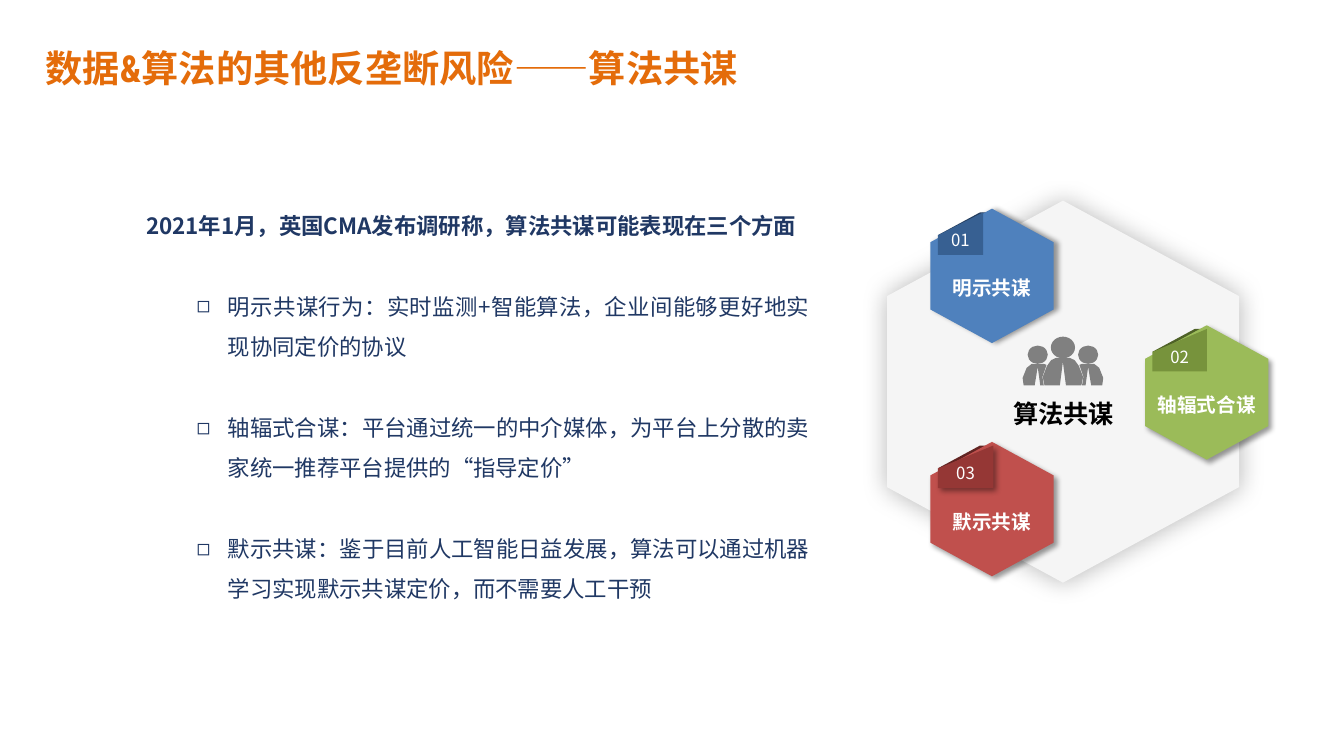
"""Build a slide on algorithmic collusion: three listed forms beside a hexagon diagram."""
from dataclasses import dataclass

from lxml import etree
from pptx import Presentation
from pptx import util as u
from pptx.enum import shapes, text
from pptx.dml.color import RGBColor
from pptx.oxml.ns import qn


@dataclass(frozen=True)
class Theme:
    orange: str = "E46C0A"
    navy: str = "203864"
    white: str = "FFFFFF"
    black: str = "000000"
    pale: str = "F5F5F5"
    grey: str = "808080"
    cjk: str = "Noto Sans CJK SC"
    latin_title: str = "Roboto Condensed"
    title: float = 26.6
    centre: int = 18
    body: int = 16
    label: int = 14
    number: int = 12


theme = Theme()
deck = Presentation()
deck.slide_width, deck.slide_height = u.Inches(13.33), u.Inches(7.5)
COL, ROW = deck.slide_width / 80, deck.slide_height / 45
slide = deck.slides.add_slide(deck.slide_layouts[1])


def write(paragraph, words, size, color, bold=False, latin=theme.cjk):
    run = paragraph.add_run()
    run.text = words
    run.font.size, run.font.bold = u.Pt(size), bold
    run.font.color.rgb = RGBColor.from_string(color)
    run.font.name = latin
    etree.SubElement(run.font._element, qn("a:ea"), typeface=theme.cjk)


def outline(left, top, points, color, shadow=None):
    (x, y), *rest = [(round((left + px) * COL), round((top + py) * ROW)) for px, py in points]
    builder = slide.shapes.build_freeform(x, y)
    builder.add_line_segments(rest, close=True)
    form = builder.convert_to_shape()
    form.fill.solid()
    form.fill.fore_color.rgb = RGBColor.from_string(color)
    form.line.fill.background()
    form.shadow.inherit = False
    if shadow:
        alpha, blur, distance, angle = shadow
        effects = form._element.spPr.find(qn("a:effectLst"))
        outer = etree.SubElement(effects, qn("a:outerShdw"), blurRad=str(u.Pt(blur)),
                                 dist=str(u.Pt(distance)), dir=str(angle * 60000),
                                 algn="ctr", rotWithShape="0")
        shade = etree.SubElement(outer, qn("a:srgbClr"), val=theme.black)
        etree.SubElement(shade, qn("a:alpha"), val=str(alpha * 1000))
    return form


heading = slide.shapes.title
forms = slide.placeholders[1]
for holder, (left, top, width, height) in (
    (heading, (2.7, 2.7, 52.3, 2.7)),
    (forms, (8.1, 11.52, 40.7, 24.54)),
):
    holder.left, holder.top = round(left * COL), round(top * ROW)
    holder.width, holder.height = round(width * COL), round(height * ROW)
    holder.text_frame.word_wrap = True
    holder.text_frame.auto_size = text.MSO_AUTO_SIZE.NONE
    holder.text_frame.vertical_anchor = text.MSO_ANCHOR.TOP

frame = heading.text_frame
frame.margin_left = frame.margin_top = frame.margin_right = frame.margin_bottom = 0
frame.paragraphs[0].alignment = text.PP_ALIGN.LEFT
write(frame.paragraphs[0], "数据&算法的其他反垄断风险——算法共谋", theme.title, theme.orange,
      True, theme.latin_title)

statements = (
    "2021年1月，英国CMA发布调研称，算法共谋可能表现在三个方面",
    "明示共谋行为：实时监测+智能算法，企业间能够更好地实现协同定价的协议",
    "轴辐式合谋：平台通过统一的中介媒体，为平台上分散的卖家统一推荐平台提供的“指导定价”",
    "默示共谋：鉴于目前人工智能日益发展，算法可以通过机器学习实现默示共谋定价，而不需要人工干预",
)
for order, statement in enumerate(statements):
    listed = order > 0
    paragraph = forms.text_frame.add_paragraph() if listed else forms.text_frame.paragraphs[0]
    paragraph.alignment = text.PP_ALIGN.JUSTIFY
    paragraph.line_spacing = 1.5
    paragraph.space_before = u.Pt(29 if listed else 0)
    paragraph.level = int(listed)
    properties = paragraph._p.get_or_add_pPr()
    properties.set("marL", str(u.Inches(0.81 if listed else 0)))
    properties.set("indent", str(u.Inches(-0.31 if listed else 0)))
    if listed:
        etree.SubElement(properties, qn("a:buChar"), char="◻")
    else:
        etree.SubElement(properties, qn("a:buNone"))
    write(paragraph, statement, theme.body, theme.navy, not listed)

hexagon = ((0.5, 0), (1, 0.25), (1, 0.75), (0.5, 1), (0, 0.75), (0, 0.25))
outline(52.8, 11.94, [(x * 20.95, y * 22.74) for x, y in hexagon], theme.pale, (28, 18, 0, 0))

badges = (
    ("01", "明示共谋", 55.38, 2.7, "4F81BD", "254061", "376092", 0, None),
    ("02", "轴辐式合谋", 68.16, 3.24, "9BBB59", "4F6228", "77933C", 45, None),
    ("03", "默示共谋", 55.38, 3.3, "C0504D", "632523", "953735", 45, (40, 4, 3, 45)),
)
for order, (number, name, left, tab_width, color, dark, medium, angle, tab_shadow) in enumerate(badges):
    top = 12.42 + order * 6.94
    tab_left, tab_top = left + 0.44, top + 0.22
    outline(tab_left, tab_top, ((0, 1.36), (2.52, 0), (3.24, 0), (3.24, 1.36)), dark)
    badge = outline(left, top, [(x * 7.34, y * 8) for x, y in hexagon], color, (40, 4, 3, angle))
    tab = outline(tab_left, tab_top,
                  ((0, 2.53), (tab_width, 2.53), (tab_width, 0), (0, 1.37)), medium, tab_shadow)
    badge.text_frame.margin_bottom = u.Inches(0.43)
    for part, words, size, bold in ((badge, name, theme.label, True),
                                    (tab, number, theme.number, False)):
        part.text_frame.word_wrap = True
        part.text_frame.vertical_anchor = text.MSO_ANCHOR.BOTTOM
        part.text_frame.paragraphs[0].alignment = text.PP_ALIGN.CENTER
        write(part.text_frame.paragraphs[0], words, size, theme.white, bold)

middle, crown = 63.27, 20.04
half_coat = [(0, 1.5), (-0.18, 2.9), (-1.1, 2.9), (-1.2, 2.4), (-0.95, 1.75), (-0.7, 1.4), (-0.42, 1.27)]
front_coat = half_coat + [(-x, y) for x, y in half_coat[:0:-1]]
side_coat = [(-0.36, 1.62), (-0.66, 1.86), (-0.9, 2.46), (-0.84, 2.9), (-0.18, 2.9), (0, 1.8),
             (0.15, 2.9), (0.36, 2.9), (0.28, 2.4), (0.52, 1.68), (0.36, 1.62)]
people = (
    (0, 0, 1.44, 1.29, front_coat),
    (-1.5, 0.53, 1.2, 1.09, side_coat),
    (1.5, 0.53, 1.2, 1.09, [(-x, y) for x, y in side_coat]),
)
for shift, drop, head_width, head_height, coat in people:
    outline(middle + shift, crown, coat, theme.grey)
    head = slide.shapes.add_shape(
        shapes.MSO_SHAPE.OVAL, round((middle + shift - head_width / 2) * COL),
        round((crown + drop) * ROW), round(head_width * COL), round(head_height * ROW))
    head.fill.solid()
    head.fill.fore_color.rgb = RGBColor.from_string(theme.grey)
    head.line.fill.background()
    head.shadow.inherit = False

topic = slide.shapes.add_textbox(round(58.46 * COL), round(22.92 * ROW),
                                 round(9.7 * COL), round(3.4 * ROW)).text_frame
topic.word_wrap = True
topic.vertical_anchor = text.MSO_ANCHOR.MIDDLE
topic.paragraphs[0].alignment = text.PP_ALIGN.CENTER
write(topic.paragraphs[0], "算法共谋", theme.centre, theme.black, True)

deck.save("out.pptx")
